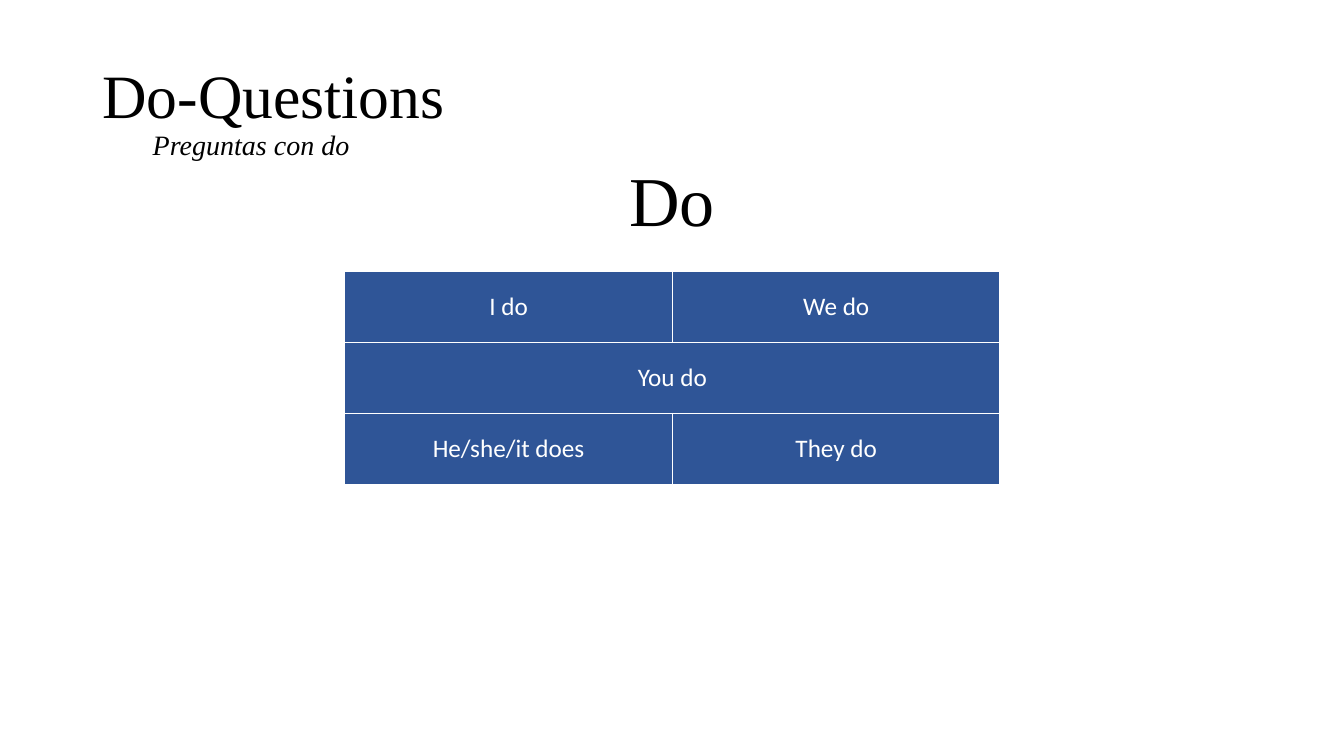
from pptx import Presentation
from pptx.dml.color import RGBColor as RGB
from pptx.enum.text import MSO_ANCHOR as Anchor, PP_ALIGN as Align
from pptx.oxml import parse_xml
from pptx.oxml.ns import nsdecls
from pptx.util import Pt

BLACK = RGB(0, 0, 0)
WHITE = RGB(0xFF, 0xFF, 0xFF)
BLUE = RGB(0x2F, 0x55, 0x97)
SERIF, SANS = "Times New Roman", "Calibri"
FORMS = [["I do", "We do"], ["You do", ""], ["He/she/it does", "They do"]]


def style(run, size, face, color):
    """Set the size, face and colour of a run."""
    run.font.size = Pt(size)
    run.font.name = face
    run.font.color.rgb = color


def add_text(slide, text, box, sizes):
    """Add a serif text box with one size for each run."""
    frame = slide.shapes.add_textbox(*map(Pt, box)).text_frame
    para = frame.paragraphs[0]
    para.text = text
    for run, size in zip(para.runs, sizes):
        style(run, size, SERIF, BLACK)
    return frame


def add_title(slide):
    """Add the title with its indented subtitle."""
    frame = add_text(slide, "Do-Questions\v\tPreguntas con do",
                     (66, 28.75, 828, 104.4), (44, 20))
    frame.word_wrap = True
    frame.vertical_anchor = Anchor.MIDDLE
    para = frame.paragraphs[0]
    para.line_spacing = 0.9
    para.runs[1].font.italic = True


def add_verb(slide):
    """Add the verb above the table."""
    frame = add_text(slide, "Do", (440.6, 108, 79.2, 67.7), (50,))
    frame.word_wrap = False
    frame.paragraphs[0].alignment = Align.CENTER


def add_edges(cell):
    """Draw a thin line on each side of a cell."""
    props = cell._tc.get_or_add_tcPr()
    for spot, side in enumerate("LRTB"):
        props.insert(spot, parse_xml(
            f'<a:ln{side} {nsdecls("a")} w="{Pt(1)}"><a:solidFill>'
            f'<a:srgbClr val="{WHITE}"/></a:solidFill></a:ln{side}>'))


def add_forms(slide):
    """Add the table of verb forms."""
    table = slide.shapes.add_table(
        3, 2, Pt(246.3), Pt(193.9), Pt(468), Pt(152.1)).table
    for row, words in zip(table.rows, FORMS):
        row.height = Pt(50.7)
        for cell, word in zip(row.cells, words):
            cell.fill.solid()
            cell.fill.fore_color.rgb = BLUE
            cell.vertical_anchor = Anchor.MIDDLE
            add_edges(cell)
            para = cell.text_frame.paragraphs[0]
            para.text = word
            para.alignment = Align.CENTER
            for run in para.runs:
                style(run, 18, SANS, WHITE)
                run.font.bold = False
    table.cell(1, 0).merge(table.cell(1, 1))


def main():
    """Build and save the slide."""
    deck = Presentation()
    deck.slide_width, deck.slide_height = Pt(960), Pt(540)
    slide = deck.slides.add_slide(deck.slide_layouts[6])
    add_title(slide)
    add_forms(slide)
    add_verb(slide)
    deck.save("out.pptx")


if __name__ == "__main__":
    main()
